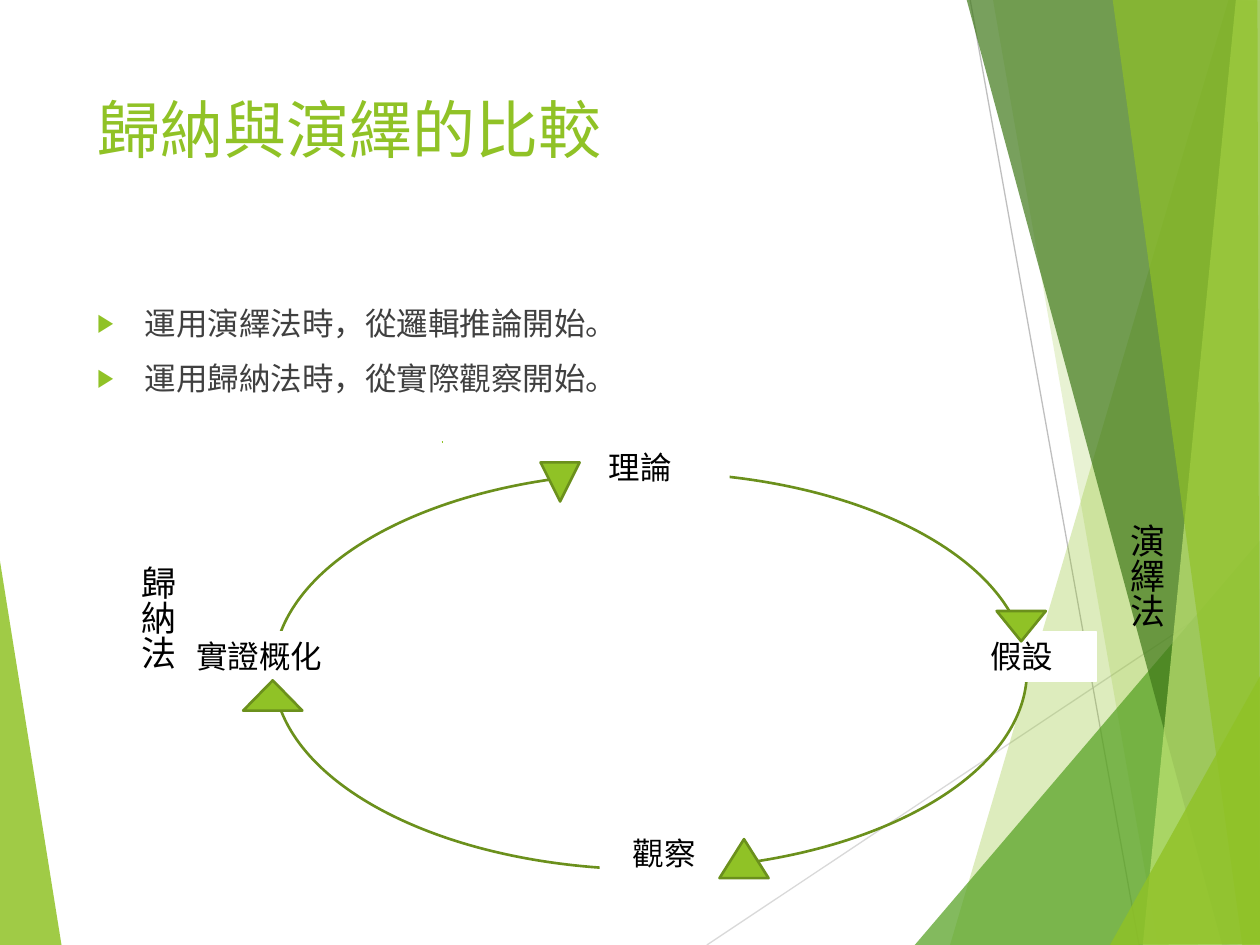
"""Build a slide comparing induction and deduction as a cycle of inquiry."""
from lxml import etree
from pptx import Presentation
from pptx.enum import shapes, text
from pptx.dml.color import RGBColor
from pptx.oxml import ns
from pptx.util import Inches, Pt

FONT = "Karla"
COLORS = {
    "lime": "90C226",
    "green": "54A021",
    "forest": "3F7819",
    "pale": "C0E474",
    "outline": "6B901C",
    "light_gray": "D9D9D9",
    "gray": "BFBFBF",
    "body": "404040",
    "black": "000000",
    "white": "FFFFFF",
}
LEFT_FACET = ([(-0.01, 4.39), (0.49, 7.51), (-0.01, 7.5)], "lime", 85)
RIGHT_FACETS = [
    ([(9.75, 0), (7.54, 7.5), (10.02, 7.51), (10.01, 0.01)], "lime", 30),
    ([(7.88, -0.01), (9.19, 7.5), (10.01, 7.5), (10.01, -0.01)], "lime", 20),
    ([(7.26, 7.5), (10, 4.29), (10.01, 7.5)], "green", 72),
    ([(7.67, -0.01), (9.7, 7.5), (10.01, 7.49), (10.01, -0.01)], "forest", 70),
    ([(9.81, -0.01), (9.07, 7.5), (10.01, 7.5), (10, -0.01)], "pale", 70),
    ([(8.83, -0.01), (9.86, 7.5), (10, 7.5), (9.98, -0.01)], "lime", 65),
    ([(8.81, 7.5), (10.01, 5.35), (10.01, 7.49)], "lime", 80),
]
RAYS = [
    ((5.61, 7.5), (10.01, 4.57), "light_gray"),
    ((7.7, 0), (9.04, 7.5), "gray"),
]
STAGES = [
    ("假設", (7.76, 5.01, 0.94, 0.4), text.PP_ALIGN.LEFT, "white"),
    ("觀察", (4.76, 6.57, 1.02, 0.4), text.PP_ALIGN.CENTER, None),
    ("實證概化", (1.46, 5.01, 1.57, 0.4), text.PP_ALIGN.LEFT, None),
    ("理論", (4.37, 3.51, 1.42, 0.4), text.PP_ALIGN.CENTER, None),
]
SHAPE = shapes.MSO_SHAPE
ARROWS = [
    (SHAPE.FLOWCHART_MERGE, (7.91, 4.85, 0.39, 0.24), 0),
    (SHAPE.ISOSCELES_TRIANGLE, (1.93, 5.4, 0.47, 0.24), 0),
    (SHAPE.ISOSCELES_TRIANGLE, (5.71, 6.66, 0.39, 0.31), 0),
    (SHAPE.ISOSCELES_TRIANGLE, (4.29, 3.67, 0.31, 0.31), 180),
]
METHODS = [
    ("演繹法", (8.78, 4.06, 0.54, 1.89)),
    ("歸納法", (0.93, 4.39, 0.54, 1.89)),
]


def rgb(name):
    return RGBColor.from_string(COLORS[name])


def inches(values):
    return [Inches(value) for value in values]


def add_child(parent, tag, **attributes):
    return etree.SubElement(parent, ns.qn(tag), attributes)


def style_shape(shape, fill=None, line=None, width=1.5):
    shape.shadow.inherit = False
    if fill:
        shape.fill.solid()
        shape.fill.fore_color.rgb = rgb(fill)
    else:
        shape.fill.background()
    if line:
        shape.line.color.rgb = rgb(line)
        shape.line.width = Pt(width)
    else:
        shape.line.fill.background()


def style_paragraph(paragraph, size, color, alignment=text.PP_ALIGN.LEFT):
    paragraph.alignment = alignment
    for run in paragraph.runs:
        run.font.name = FONT
        run.font.size = Pt(size)
        run.font.color.rgb = rgb(color)


def add_facet(slide, points, color, opacity):
    start, *others = [inches(point) for point in points]
    builder = slide.shapes.build_freeform(*start, scale=1.0)
    builder.add_line_segments(others, close=True)
    shape = builder.convert_to_shape()
    style_shape(shape, color)
    color_element = next(shape.element.spPr.iter(ns.qn("a:srgbClr")))
    add_child(color_element, "a:alpha", val=str(opacity * 1000))


def add_ray(slide, start, end, color):
    ray = slide.shapes.add_connector(
        shapes.MSO_CONNECTOR.STRAIGHT, *inches(start + end))
    ray.line.color.rgb = rgb(color)
    ray.line.width = Pt(0.75)
    add_child(ray.element.spPr, "a:effectLst")


def add_shape(slide, kind, box, **style):
    shape = slide.shapes.add_shape(kind, *inches(box))
    style_shape(shape, **style)
    return shape


def add_stage(slide, label, box, alignment, line):
    shape = add_shape(slide, SHAPE.RECTANGLE, box,
                      fill="white", line=line, width=0.75)
    shape.text_frame.text = label
    shape.text_frame.auto_size = text.MSO_AUTO_SIZE.SHAPE_TO_FIT_TEXT
    style_paragraph(shape.text_frame.paragraphs[0], 18, "black", alignment)


def add_method(slide, label, box):
    frame = slide.shapes.add_textbox(*inches(box)).text_frame
    frame.text = label
    frame.word_wrap = True
    frame.auto_size = text.MSO_AUTO_SIZE.SHAPE_TO_FIT_TEXT
    frame._txBody.bodyPr.set("vert", "eaVert")
    style_paragraph(frame.paragraphs[0], 20, "black")


def fill_placeholder(slide, placeholder, box, content, size, color):
    slide.shapes.element.append(placeholder.element)
    placeholder.left, placeholder.top, placeholder.width, placeholder.height = inches(box)
    frame = placeholder.text_frame
    frame.text = content
    frame.vertical_anchor = text.MSO_ANCHOR.TOP
    for paragraph in frame.paragraphs:
        style_paragraph(paragraph, size, color)
    return frame.paragraphs


def add_bullet(paragraph):
    paragraph.space_before = Pt(10)
    properties = paragraph._p.get_or_add_pPr()
    properties.set("marL", str(Inches(0.38)))
    properties.set("indent", str(Inches(-0.38)))
    bullet_color = add_child(properties, "a:buClr")
    add_child(bullet_color, "a:srgbClr", val=COLORS["lime"])
    add_child(properties, "a:buSzPct", val="80000")
    add_child(properties, "a:buChar", char="▶")


def main():
    presentation = Presentation()
    presentation.slide_width, presentation.slide_height = inches((10, 7.5))
    slide = presentation.slides.add_slide(presentation.slide_layouts[1])
    title, body = slide.placeholders

    add_facet(slide, *LEFT_FACET)
    for ray in RAYS:
        add_ray(slide, *ray)
    for facet in RIGHT_FACETS:
        add_facet(slide, *facet)

    add_shape(slide, SHAPE.OVAL, (2.17, 3.75, 5.98, 3.15), line="outline")
    fill_placeholder(slide, title, (0.67, 0.67, 6.94, 1.44),
                     "歸納與演繹的比較", 36, "lime")
    points = "運用演繹法時，從邏輯推論開始。\n運用歸納法時，從實際觀察開始。"
    for paragraph in fill_placeholder(
            slide, body, (0.67, 2.36, 6.94, 4.24), points, 18, "body"):
        add_bullet(paragraph)

    for stage in STAGES:
        add_stage(slide, *stage)
    arc = add_shape(slide, SHAPE.ARC, (2.56, 3.51, 1.89, 1.42), line="lime", width=1)
    arc.adjustments[0] = 162
    arc.adjustments[1] = 162.35
    for kind, box, rotation in ARROWS:
        arrow = add_shape(slide, kind, box, fill="lime", line="outline")
        arrow.rotation = rotation
    for method in METHODS:
        add_method(slide, *method)

    presentation.save("out.pptx")


if __name__ == "__main__":
    main()
